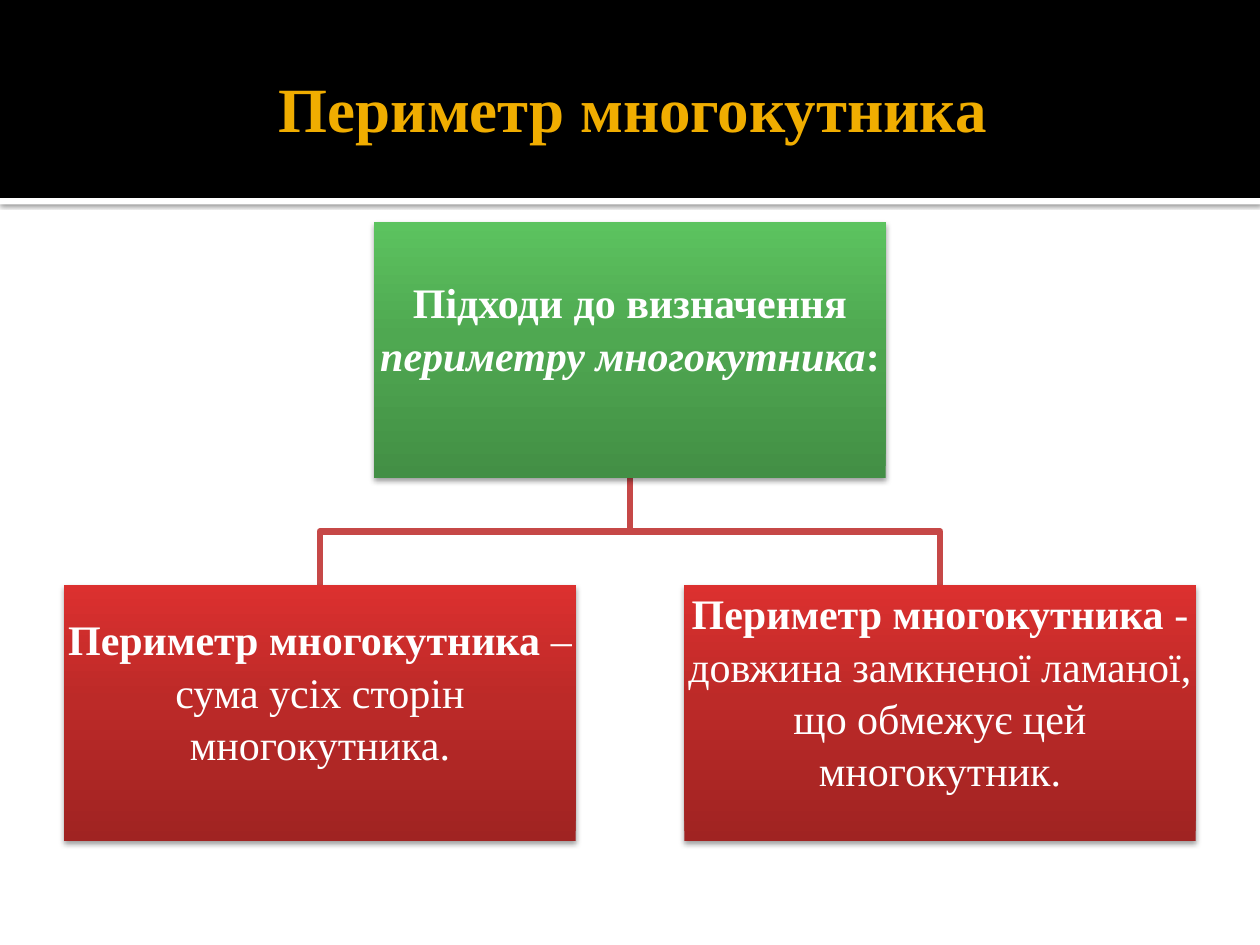
"""Build a slide with two definitions of the perimeter of a polygon."""
from lxml import etree
from pptx import Presentation
from pptx.dml.color import RGBColor
from pptx.enum.shapes import MSO_SHAPE
from pptx.enum.text import MSO_ANCHOR, PP_ALIGN
from pptx.oxml.ns import qn
from pptx.util import Cm, Pt

RECTANGLE = MSO_SHAPE.RECTANGLE
MIDDLE = MSO_ANCHOR.MIDDLE
CENTER = PP_ALIGN.CENTER

FONT = "Times New Roman"
WHITE = RGBColor(0xFF, 0xFF, 0xFF)
BLACK = RGBColor(0x00, 0x00, 0x00)
GOLD = RGBColor(0xF0, 0xAD, 0x00)
LINK_RED = RGBColor(0xC6, 0x48, 0x47)
GREENS = (RGBColor(0x43, 0x8F, 0x45), RGBColor(0x4F, 0xA8, 0x51), RGBColor(0x5C, 0xC3, 0x5F))
REDS = (RGBColor(0xA0, 0x23, 0x22), RGBColor(0xBC, 0x2A, 0x28), RGBColor(0xDC, 0x30, 0x2F))
STOPS = (0, 55, 100)

SLIDE_WIDTH, SLIDE_HEIGHT = Cm(25.4), Cm(19.05)
BAND_HEIGHT = Cm(3.99)
BOX_WIDTH, BOX_HEIGHT = Cm(10.31), Cm(5.16)
MIDDLE_X = SLIDE_WIDTH // 2
BRANCH_OFFSET = Cm(6.25)
ROOT_TOP, LEAF_TOP = Cm(4.47), Cm(11.79)

ROOT_TEXT = [[("Підходи до визначення ", True, False),
              ("периметру многокутника", True, True), (":", True, False)]]
LEAF_TEXTS = [
    [[("Периметр многокутника ", True, False), ("– ", False, False)],
     [("сума усіх сторін многокутника.", False, False)]],
    [[("Периметр многокутника ", True, False),
      ("- довжина замкненої ламаної, що обмежує цей многокутник.", False, False)]],
]


def add_color(parent, color, alpha=100):
    """Append a colour with an opacity in percent."""
    node = etree.SubElement(parent, qn("a:srgbClr"), val=str(color))
    if alpha < 100:
        etree.SubElement(node, qn("a:alpha"), val=str(alpha * 1000))


def add_shadow(shape, alpha, blur, distance):
    """Give a shape a soft shadow that falls straight down."""
    shape.shadow.inherit = False
    effects = shape._element.spPr.find(qn("a:effectLst"))
    shadow = etree.SubElement(effects, qn("a:outerShdw"), blurRad=str(Pt(blur)),
                              dist=str(Pt(distance)), dir="5400000", rotWithShape="0")
    add_color(shadow, BLACK, alpha)


def fill_gradient(shape, colors):
    """Fill a shape with a gradient that runs from bottom to top."""
    shape.fill.gradient()
    gradient = shape._element.spPr.find(qn("a:gradFill"))
    for child in list(gradient):
        gradient.remove(child)
    stops = etree.SubElement(gradient, qn("a:gsLst"))
    for position, color in zip(STOPS, colors):
        add_color(etree.SubElement(stops, qn("a:gs"), pos=str(position * 1000)), color)
    etree.SubElement(gradient, qn("a:lin"), ang="16200000", scaled="0")


def format_span(span, size, color, bold, italic=False):
    """Set the font of a run."""
    font = span.font
    font.name, font.size = FONT, Pt(size)
    font.bold, font.italic = bold, italic
    font.color.rgb = color


def add_rectangle(page, left, top, width, height):
    """Add a rectangle without outline or shadow."""
    box = page.shapes.add_shape(RECTANGLE, left, top, width, height)
    box.line.fill.background()
    box.shadow.inherit = False
    return box


def add_band(page, top, height, color):
    """Add a plain band across the slide."""
    band = add_rectangle(page, 0, top, SLIDE_WIDTH, height)
    band.fill.solid()
    band.fill.fore_color.rgb = color
    return band


def add_title(page, text):
    """Format the title placeholder and bring it in front of the band."""
    title = page.shapes.title
    title.left, title.top, title.width, title.height = Cm(1.27), Cm(0.43), Cm(22.86), Cm(3.48)
    frame = title.text_frame
    frame.text = text
    frame.vertical_anchor = MIDDLE
    frame.margin_left, frame.margin_right = Cm(0.25), Cm(0.13)
    para = frame.paragraphs[0]
    para.alignment = CENTER
    format_span(para.runs[0], 36, GOLD, True)
    page.shapes._spTree.append(title._element)


def add_node(page, center, top, colors, paragraphs):
    """Add a box of the tree with its text."""
    box = add_rectangle(page, center - BOX_WIDTH // 2, top, BOX_WIDTH, BOX_HEIGHT)
    fill_gradient(box, colors)
    add_shadow(box, 38, 3.3, 2)
    frame = box.text_frame
    frame.word_wrap = True
    frame.vertical_anchor = MIDDLE
    frame.margin_left = frame.margin_right = frame.margin_top = Cm(0.05)
    frame.margin_bottom = Cm(0.95)
    for index, pieces in enumerate(paragraphs):
        para = frame.add_paragraph() if index else frame.paragraphs[0]
        para.alignment = CENTER
        para.line_spacing = 1.04
        for text, bold, italic in pieces:
            span = para.add_run()
            span.text = text
            format_span(span, 24, WHITE, bold, italic)


def add_branch(page, center):
    """Draw the bent line from the root box to a leaf box."""
    start = ROOT_TOP + BOX_HEIGHT
    bend = (start + LEAF_TOP) // 2
    builder = page.shapes.build_freeform(MIDDLE_X, start)
    builder.add_line_segments([(MIDDLE_X, bend), (center, bend), (center, LEAF_TOP)], close=False)
    branch = builder.convert_to_shape()
    branch.fill.background()
    branch.line.color.rgb = LINK_RED
    branch.line.width = Pt(3.78)
    branch.shadow.inherit = False


def main():
    """Build and save the deck."""
    deck = Presentation()
    deck.slide_width, deck.slide_height = SLIDE_WIDTH, SLIDE_HEIGHT
    page = deck.slides.add_slide(deck.slide_layouts[5])
    add_shadow(add_band(page, BAND_HEIGHT, Cm(0.13), WHITE), 60, 2.5, 0.8)
    add_band(page, 0, BAND_HEIGHT, BLACK)
    add_title(page, "Периметр многокутника")
    centers = (MIDDLE_X - BRANCH_OFFSET, MIDDLE_X + BRANCH_OFFSET)
    for center in centers:
        add_branch(page, center)
    add_node(page, MIDDLE_X, ROOT_TOP, GREENS, ROOT_TEXT)
    for center, text in zip(centers, LEAF_TEXTS):
        add_node(page, center, LEAF_TOP, REDS, text)
    deck.save("out.pptx")


if __name__ == "__main__":
    main()
